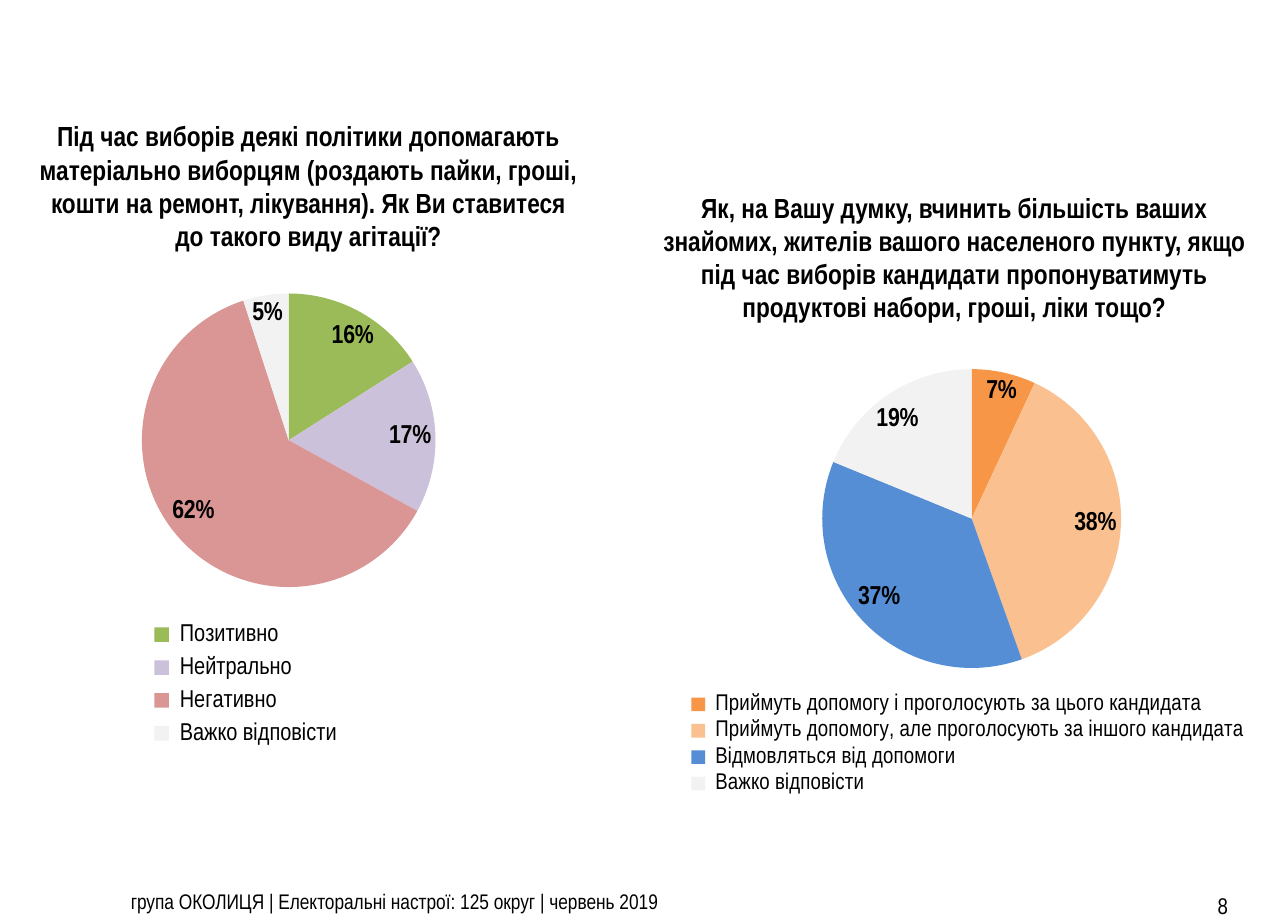
import dataclasses
import typing

import pptx
import pptx.chart.data
import pptx.dml.color
import pptx.enum.chart
import pptx.enum.text
import pptx.oxml
import pptx.oxml.ns
import pptx.util

FONT = "Arial Narrow"
BLACK = pptx.dml.color.RGBColor(0x00, 0x00, 0x00)
GREEN = pptx.dml.color.RGBColor(0x9B, 0xBB, 0x59)
LILAC = pptx.dml.color.RGBColor(0xCC, 0xC1, 0xDA)
ROSE = pptx.dml.color.RGBColor(0xD9, 0x96, 0x94)
PALE_GREY = pptx.dml.color.RGBColor(0xF2, 0xF2, 0xF2)
ORANGE = pptx.dml.color.RGBColor(0xF7, 0x96, 0x46)
PEACH = pptx.dml.color.RGBColor(0xFA, 0xC0, 0x90)
BLUE = pptx.dml.color.RGBColor(0x55, 0x8E, 0xD5)

SLIDE_WIDTH = pptx.util.Pt(793.75)
SLIDE_HEIGHT = pptx.util.Pt(567)
COLUMN = SLIDE_WIDTH / 100
ROW = SLIDE_HEIGHT / 100

LEGEND_POSITION = pptx.enum.chart.XL_LEGEND_POSITION
ALIGN = pptx.enum.text.PP_ALIGN
ANCHOR = pptx.enum.text.MSO_ANCHOR


class Area(typing.NamedTuple):
    """A rectangle, in grid columns and rows or in shares of a chart."""
    left: float
    top: float
    width: float
    height: float

    def on_slide(self) -> tuple[int, int, int, int]:
        return (round(self.left * COLUMN), round(self.top * ROW),
                round(self.width * COLUMN), round(self.height * ROW))


class Answer(typing.NamedTuple):
    label: str
    percent: int
    color: pptx.dml.color.RGBColor


@dataclasses.dataclass(frozen=True)
class Poll:
    question: str
    question_area: Area
    chart_area: Area
    plot_area: Area
    legend_area: Area
    legend_position: LEGEND_POSITION
    legend_size: int
    answers: tuple[Answer, ...]


POLLS = (
    Poll(
        "Під час виборів деякі політики допомагають матеріально виборцям "
        "(роздають пайки, гроші, кошти на ремонт, лікування). "
        "Як Ви ставитеся до такого виду агітації?",
        Area(1.81, 17.2, 44.28, 5.96),
        Area(2.36, 31.9, 55.72, 57),
        Area(0.09, 0, 0.54, 0.56),
        Area(0.12, 0.61, 0.36, 0.27),
        LEGEND_POSITION.RIGHT, 15,
        (Answer(" Позитивно", 16, GREEN),
         Answer(" Нейтрально", 17, LILAC),
         Answer(" Негативно", 62, ROSE),
         Answer(" Важко відповісти", 5, PALE_GREY)),
    ),
    Poll(
        "Як, на Вашу думку, вчинить більшість ваших знайомих, жителів вашого "
        "населеного пункту, якщо під час виборів кандидати пропонуватимуть "
        "продуктові набори, гроші, ліки тощо?",
        Area(49.46, 24.93, 49.27, 5.96),
        Area(45, 35, 57.44, 57),
        Area(0.26, 0.09, 0.54, 0.57),
        Area(0.13, 0.7, 0.79, 0.21),
        LEGEND_POSITION.BOTTOM, 14,
        (Answer(" Приймуть допомогу і проголосують за цього кандидата", 7, ORANGE),
         Answer(" Приймуть допомогу, але проголосують за іншого кандидата", 38, PEACH),
         Answer(" Відмовляться від допомоги", 37, BLUE),
         Answer(" Важко відповісти", 19, PALE_GREY)),
    ),
)


def write_text(box, area: Area, text: str, size: int, bold: bool = False,
               align: ALIGN = ALIGN.LEFT, anchor: ANCHOR = ANCHOR.MIDDLE) -> None:
    box.left, box.top, box.width, box.height = area.on_slide()
    frame = box.text_frame
    frame.text = text
    frame.word_wrap = True
    frame.auto_size = pptx.enum.text.MSO_AUTO_SIZE.NONE
    frame.vertical_anchor = anchor
    frame.margin_left = frame.margin_right = pptx.util.Inches(0.1)
    frame.margin_top = frame.margin_bottom = pptx.util.Inches(0.05)
    para = frame.paragraphs[0]
    para.alignment = align
    para.space_before = pptx.util.Pt(0)
    set_font(para.font, size, bold)


def set_font(font, size: int, bold: bool = False) -> None:
    font.name = FONT
    font.size = pptx.util.Pt(size)
    font.bold = bold
    font.color.rgb = BLACK


def place_in_chart(element, area: Area, index: int, target: str = "") -> None:
    """Give a plot area or legend a manual layout, as its child at index."""
    for old in element.findall(pptx.oxml.ns.qn("c:layout")):
        element.remove(old)
    values = {"xMode": "edge", "yMode": "edge", "x": area.left, "y": area.top,
              "w": area.width, "h": area.height}
    if target:
        values = {"layoutTarget": target} | values
    settings = "".join(f'<c:{name} val="{value}"/>' for name, value in values.items())
    element.insert(index, pptx.oxml.parse_xml(
        f'<c:layout {pptx.oxml.ns.nsdecls("c")}>'
        f"<c:manualLayout>{settings}</c:manualLayout></c:layout>"))


def draw_pie(slide, poll: Poll) -> None:
    data = pptx.chart.data.CategoryChartData()
    data.categories = [answer.label for answer in poll.answers]
    data.add_series("Series 1", [answer.percent for answer in poll.answers])
    chart = slide.shapes.add_chart(
        pptx.enum.chart.XL_CHART_TYPE.PIE, *poll.chart_area.on_slide(), data).chart
    chart.has_title = False
    set_font(chart.font, 14)
    place_in_chart(chart._chartSpace.chart.plotArea, poll.plot_area, 0, "inner")

    chart.has_legend = True
    legend = chart.legend
    legend.position = poll.legend_position
    legend.include_in_layout = False
    set_font(legend.font, poll.legend_size)
    place_in_chart(legend._element, poll.legend_area, 1)

    plot = chart.plots[0]
    plot.vary_by_categories = True
    for index, answer in enumerate(poll.answers):
        slice_format = plot.series[0].points[index].format
        slice_format.fill.solid()
        slice_format.fill.fore_color.rgb = answer.color
        slice_format.line.fill.background()

    labels = plot.series[0].data_labels
    labels.show_value = False
    labels.show_percentage = True
    labels.number_format = "0%"
    labels.number_format_is_linked = False
    labels.position = pptx.enum.chart.XL_LABEL_POSITION.BEST_FIT
    set_font(labels.font, 16, bold=True)


def main() -> None:
    deck = pptx.Presentation()
    deck.slide_width = SLIDE_WIDTH
    deck.slide_height = SLIDE_HEIGHT
    comparison = deck.slide_layouts.get_by_name("Comparison")
    slide = deck.slides.add_slide(comparison)
    title, heading, *unused = slide.placeholders
    for placeholder in unused:
        placeholder.element.getparent().remove(placeholder.element)

    for poll, box in zip(POLLS, (title, heading)):
        draw_pie(slide, poll)
        write_text(box, poll.question_area, poll.question, 17, bold=True,
                   align=ALIGN.CENTER)

    number_area = Area(93.65, 96.95, 4.9, 3.05)
    number = slide.shapes.add_textbox(*number_area.on_slide())
    write_text(number, number_area, "8", 14)
    footer_area = Area(9.26, 95.94, 68.6, 4.06)
    footer = slide.shapes.add_textbox(*footer_area.on_slide())
    write_text(footer, footer_area,
               "група ОКОЛИЦЯ | Електоральні настрої: 125 округ | червень 2019",
               13, anchor=ANCHOR.TOP)
    deck.save("out.pptx")


if __name__ == "__main__":
    main()
